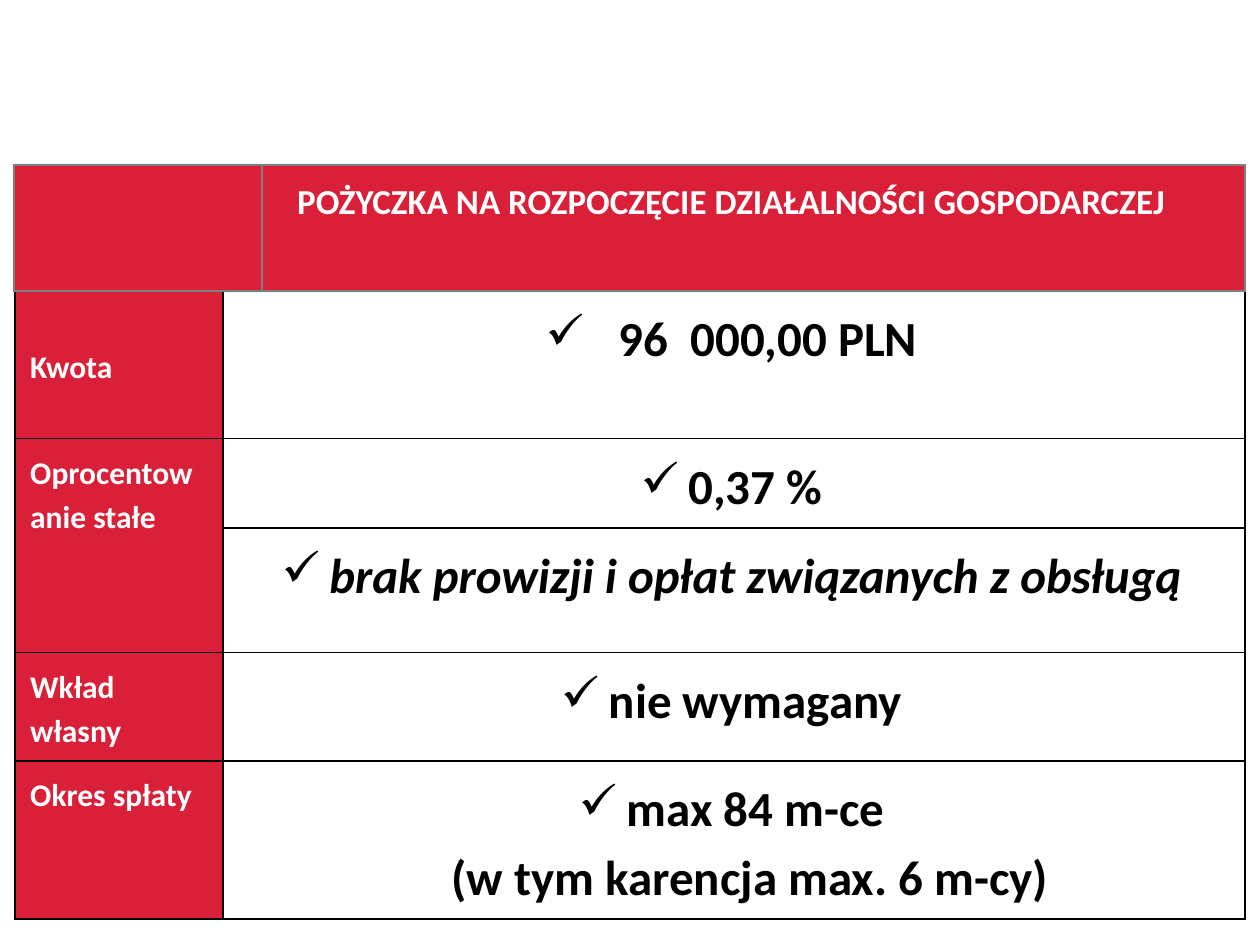
from lxml import etree
from pptx import Presentation
from pptx.dml.color import RGBColor
from pptx.enum import text
from pptx.oxml import ns
from pptx.util import Inches, Pt

COLORS = {"red": "DA2038", "white": "FFFFFF", "black": "000000", "gray": "7F7F7F"}
SIDES = ("lnL", "lnR", "lnT", "lnB")
CHECK = "✓"


def add_grid(s, box, cols, rows):
    table = s.shapes.add_table(len(rows), len(cols), *map(Inches, box)).table
    table.first_row = table.horz_banding = False
    for column, width in zip(table.columns, cols):
        column.width = Inches(width)
    for row, height in zip(table.rows, rows):
        row.height = Inches(height)
    return table


def style_cell(cell, border, fill=None, hidden=(), bottom=0.08):
    tc_pr = cell._tc.get_or_add_tcPr()
    for side in SIDES:
        ln = etree.SubElement(tc_pr, ns.qn(f"a:{side}"), w=str(Pt(1)))
        if side in hidden:
            etree.SubElement(ln, ns.qn("a:noFill"))
        else:
            solid = etree.SubElement(ln, ns.qn("a:solidFill"))
            etree.SubElement(solid, ns.qn("a:srgbClr"), val=COLORS[border])
    if fill:
        cell.fill.solid()
        cell.fill.fore_color.rgb = RGBColor.from_string(COLORS[fill])
    else:
        cell.fill.background()
    cell.margin_left, cell.margin_right = Inches(0.12), Inches(0.16)
    cell.margin_top, cell.margin_bottom = Inches(0.08), Inches(bottom)


def write(p, words, size, color, margin=0, indent=0, bullet=False, italic=False):
    p_pr = p._p.get_or_add_pPr()
    p_pr.set("marL", str(Inches(margin)))
    p_pr.set("indent", str(Inches(indent)))
    if bullet:
        etree.SubElement(p_pr, ns.qn("a:buChar"), char=CHECK)
    p.line_spacing = 1.15
    r = p.add_run()
    r.text = words
    r.font.color.rgb = RGBColor.from_string(COLORS[color])
    p.font.name = "Calibri"
    p.font.size = Pt(size)
    p.font.bold = True
    p.font.italic = italic


def write_item(cell, words, indent=0.38, italic=False):
    p = cell.text_frame.paragraphs[0]
    p.alignment = text.PP_ALIGN.CENTER
    write(p, words, 28, "black", indent, -indent, True, italic)


def add_header(s, box):
    table = add_grid(s, box, (1.97, 7.4, 0.4), (box[3],))
    for cell, hidden in zip(table.rows[0].cells, ((), ("lnR",), ("lnL",))):
        style_cell(cell, "gray", "red", hidden, bottom=0.12)
    write(table.cell(0, 1).text_frame.paragraphs[0],
          "POŻYCZKA NA ROZPOCZĘCIE DZIAŁALNOŚCI GOSPODARCZEJ", 20, "white", 0.16)


def add_terms(s, box):
    table = add_grid(s, box, (1.65, 8.11), (1.17, 0.71, 0.99, 0.86, 1.25))
    for row in table.rows:
        for cell, fill in zip(row.cells, ("red", None)):
            style_cell(cell, "black", fill)
    table.cell(1, 0).merge(table.cell(2, 0))

    labels = {0: "Kwota", 1: "Oprocentowanie stałe", 3: "Wkład własny", 4: "Okres spłaty"}
    for row, label in labels.items():
        write(table.cell(row, 0).text_frame.paragraphs[0], label, 18, "white")
    table.cell(0, 0).vertical_anchor = text.MSO_ANCHOR.MIDDLE

    write_item(table.cell(0, 1), "96  000,00 PLN", indent=0.58)
    write_item(table.cell(1, 1), "0,37 %")
    write_item(table.cell(2, 1), "brak prowizji i opłat związanych z obsługą", italic=True)
    write_item(table.cell(3, 1), "nie wymagany")
    write_item(table.cell(4, 1), "max 84 m-ce")
    p = table.cell(4, 1).text_frame.add_paragraph()
    p.alignment = text.PP_ALIGN.CENTER
    write(p, "(w tym karencja max. 6 m-cy)", 28, "black", 0.29)


def main():
    prs = Presentation()
    prs.slide_width, prs.slide_height = Inches(10), Inches(7.5)
    s = prs.slides.add_slide(prs.slide_layouts[6])
    add_terms(s, (0.12, 2.31, 9.76, 4.98))
    add_header(s, (0.11, 1.31, 9.77, 1))
    prs.save("out.pptx")


if __name__ == "__main__":
    main()
